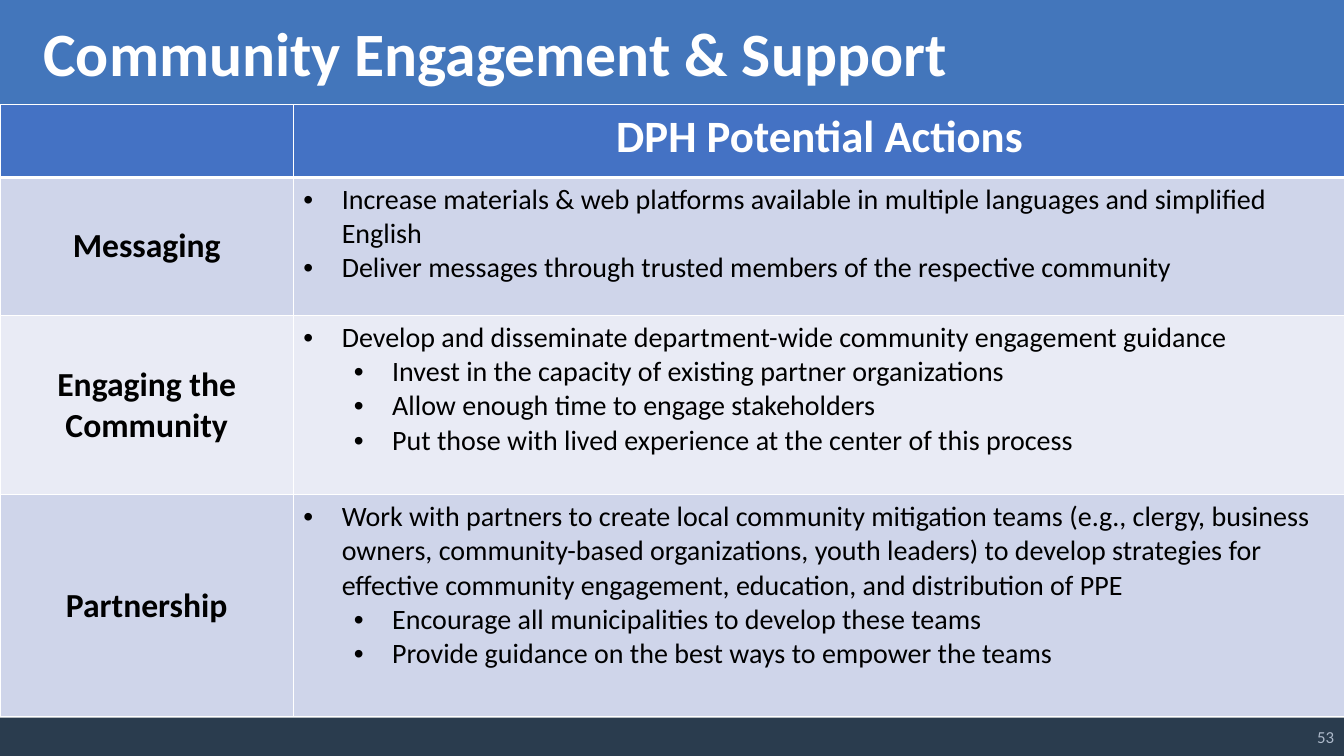
from dataclasses import dataclass

from lxml.etree import SubElement
from pptx import Presentation
from pptx.dml.color import RGBColor as RGB
from pptx.enum.shapes import MSO_SHAPE as SHAPE
from pptx.enum.text import MSO_ANCHOR as ANCHOR, PP_ALIGN as ALIGN
from pptx.oxml.ns import qn
from pptx.util import Inches, Pt

TITLE = "Community Engagement & Support"
HEADER = "DPH Potential Actions"
PAGE = "53"
# Each topic holds (indent level, action) pairs
TOPICS = [
    ("Messaging", [
        (0, "Increase materials & web platforms available in multiple languages and simplified English"),
        (0, "Deliver messages through trusted members of the respective community"),
    ]),
    ("Engaging the Community", [
        (0, "Develop and disseminate department-wide community engagement guidance"),
        (1, "Invest in the capacity of existing partner organizations"),
        (1, "Allow enough time to engage stakeholders"),
        (1, "Put those with lived experience at the center of this process"),
    ]),
    ("Partnership", [
        (0, "Work with partners to create local community mitigation teams (e.g., clergy, business "
            "owners, community-based organizations, youth leaders) to develop strategies for "
            "effective community engagement, education, and distribution of PPE"),
        (1, "Encourage all municipalities to develop these teams"),
        (1, "Provide guidance on the best ways to empower the teams"),
    ]),
]

WIDTH, HEIGHT = 13.33, 7.5
COLUMNS = [2.91, 10.44]
ROWS = [0.72, 1.37, 1.78, 2.2]
TABLE_TOP = 1.04
HANG, LEVEL_STEP = 0.38, 0.5


@dataclass(frozen=True)
class Theme:
    font: str = "Calibri"
    banner: str = "4376BB"
    footer: str = "2A3C4E"
    header: str = "4472C4"
    bands: tuple = ("CFD5EA", "E9EBF5")
    light: str = "FFFFFF"
    dark: str = "000000"
    page: str = "ADB9CA"
    title_size: int = 44
    header_size: int = 32
    topic_size: int = 24
    action_size: int = 20
    page_size: int = 12


THEME = Theme()


def add_run(p, text, size, color, bold=False):
    r = p.add_run()
    r.text = text
    r.font.name = THEME.font
    r.font.size = Pt(size)
    r.font.bold = bold
    r.font.color.rgb = RGB.from_string(color)


def add_bar(slide, top, height, color):
    sp = slide.shapes.add_shape(SHAPE.RECTANGLE, 0, Inches(top), Inches(WIDTH), Inches(height))
    sp.shadow.inherit = False
    sp.fill.solid()
    sp.fill.fore_color.rgb = RGB.from_string(color)
    sp.line.fill.background()


def style_cell(cell, color, top=1, bottom=1):
    """Fill the cell and rule its sides; top and bottom are widths in points."""
    tc_pr = cell._tc.get_or_add_tcPr()
    for side, width in (("L", 1), ("R", 1), ("T", top), ("B", bottom)):
        ln = SubElement(tc_pr, qn(f"a:ln{side}"), w=str(Pt(width)))
        SubElement(SubElement(ln, qn("a:solidFill")), qn("a:srgbClr"), val=THEME.light)
    cell.fill.solid()
    cell.fill.fore_color.rgb = RGB.from_string(color)


def add_bullet(p, level):
    p.level = level
    p_pr = p._p.get_or_add_pPr()
    p_pr.set("marL", str(Inches(HANG + level * LEVEL_STEP)))
    p_pr.set("indent", str(-Inches(HANG)))
    SubElement(p_pr, qn("a:buFont"), typeface="Arial")
    SubElement(p_pr, qn("a:buChar"), char="•")


def add_title(slide):
    title = slide.shapes.title
    title.left, title.top = Inches(0.33), Inches(0.1)
    title.width, title.height = Inches(12.56), Inches(1.45)
    tf = title.text_frame
    tf.vertical_anchor = ANCHOR.TOP
    p = tf.paragraphs[0]
    p.alignment = ALIGN.LEFT
    add_run(p, TITLE, THEME.title_size, THEME.light, True)
    slide.shapes._spTree.append(title._element)  # in front of the bars


def add_actions_table(slide):
    table = slide.shapes.add_table(
        len(ROWS), len(COLUMNS), 0, Inches(TABLE_TOP),
        Inches(sum(COLUMNS)), Inches(sum(ROWS))).table
    for column, width in zip(table.columns, COLUMNS):
        column.width = Inches(width)
    for row, height in zip(table.rows, ROWS):
        row.height = Inches(height)

    for cell in table.rows[0].cells:
        style_cell(cell, THEME.header, bottom=3)
    p = table.cell(0, 1).text_frame.paragraphs[0]
    p.alignment = ALIGN.CENTER
    add_run(p, HEADER, THEME.header_size, THEME.light, True)

    for i, (topic, actions) in enumerate(TOPICS):
        name_cell, action_cell = table.rows[i + 1].cells
        for cell in (name_cell, action_cell):
            style_cell(cell, THEME.bands[i % 2], top=1 if i else 3)
        name_cell.vertical_anchor = ANCHOR.MIDDLE
        p = name_cell.text_frame.paragraphs[0]
        p.alignment = ALIGN.CENTER
        add_run(p, topic, THEME.topic_size, THEME.dark, True)
        tf = action_cell.text_frame
        for j, (level, action) in enumerate(actions):
            p = tf.add_paragraph() if j else tf.paragraphs[0]
            add_bullet(p, level)
            add_run(p, action, THEME.action_size, THEME.dark)


def add_page_number(slide):
    box = slide.shapes.add_textbox(Inches(10.34), Inches(7.11), Inches(2.99), Inches(0.4))
    tf = box.text_frame
    tf.word_wrap = True
    tf.vertical_anchor = ANCHOR.MIDDLE
    p = tf.paragraphs[0]
    p.alignment = ALIGN.RIGHT
    add_run(p, PAGE, THEME.page_size, THEME.page)


def main():
    prs = Presentation()
    prs.slide_width, prs.slide_height = Inches(WIDTH), Inches(HEIGHT)
    slide = prs.slides.add_slide(prs.slide_layouts[5])
    add_bar(slide, 0, 1.07, THEME.banner)
    add_bar(slide, 7.12, 0.38, THEME.footer)
    add_title(slide)
    add_actions_table(slide)
    add_page_number(slide)
    prs.save("out.pptx")


if __name__ == "__main__":
    main()
